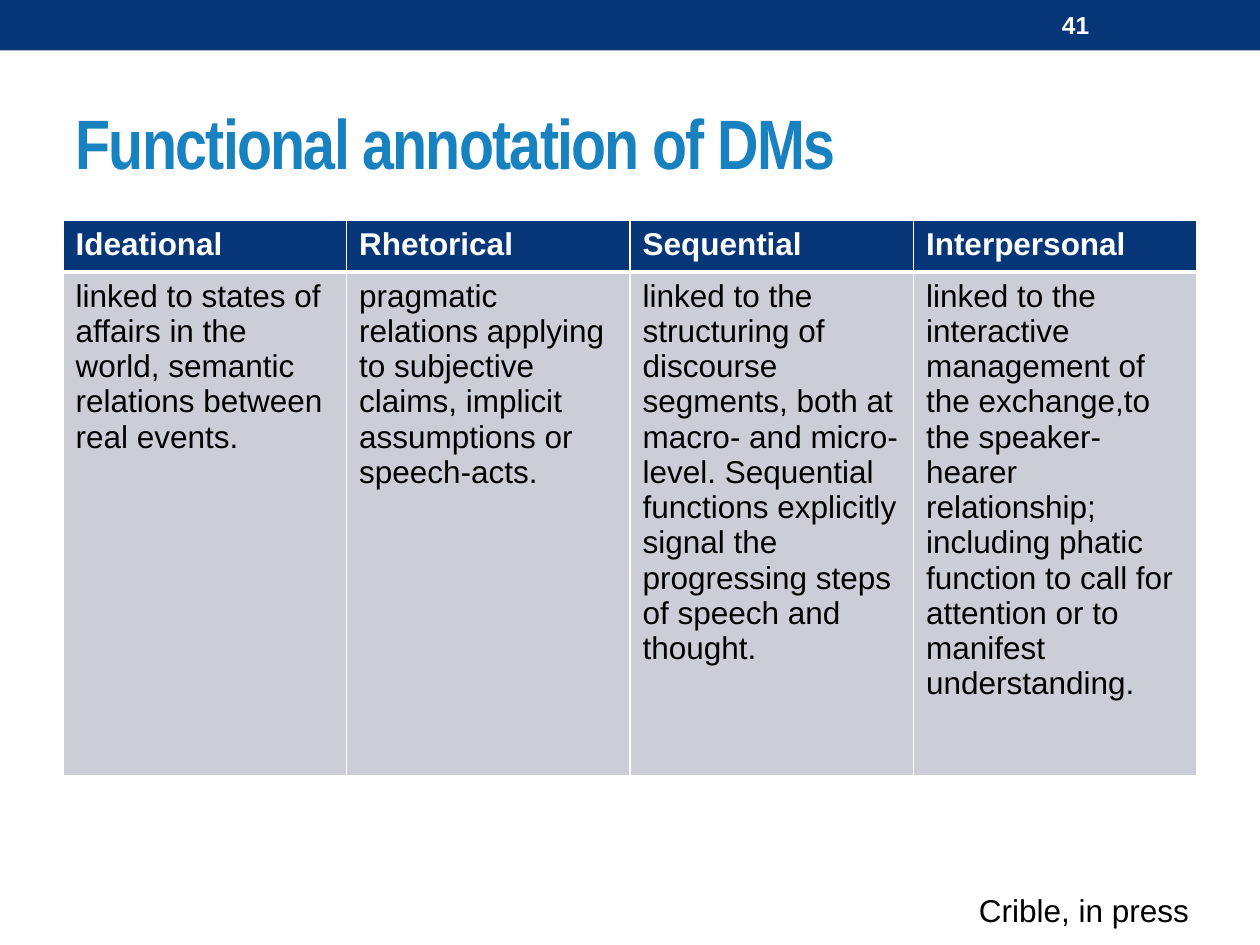
from pptx import Presentation
from pptx.dml.color import RGBColor
from pptx.enum.shapes import MSO_SHAPE as Shape
from pptx.enum.text import MSO_ANCHOR as Anchor, PP_ALIGN as Align
from pptx.oxml.ns import qn
from pptx.util import Inches, Pt
from lxml.etree import SubElement

NAVY, BLUE, GREY = "073779", "1782BF", "CCCED7"
WHITE, BLACK = "FFFFFF", "000000"

FUNCTIONS = {
    "Ideational": "linked to states of affairs in the world, semantic relations "
                  "between real events.",
    "Rhetorical": "pragmatic relations applying to subjective claims, implicit "
                  "assumptions or speech-acts.",
    "Sequential": "linked to the structuring of discourse segments, both at macro- "
                  "and micro-level. Sequential functions explicitly signal the "
                  "progressing steps of speech and thought.",
    "Interpersonal": "linked to the interactive management of the exchange,to the "
                     "speaker-hearer relationship; including phatic function to call "
                     "for attention or to manifest understanding.",
}


def set_fill(target, color):
    target.fill.solid()
    target.fill.fore_color.rgb = RGBColor.from_string(color)


def write(text_frame, text, size, color, bold=False, font_name="Arial"):
    text_frame.text = text
    paragraph = text_frame.paragraphs[0]
    paragraph.alignment = Align.LEFT
    font = paragraph.runs[0].font
    font.name, font.size, font.bold = font_name, Pt(size), bold
    font.color.rgb = RGBColor.from_string(color)


def place(shape, left, top, width, height):
    shape.left, shape.top = Inches(left), Inches(top)
    shape.width, shape.height = Inches(width), Inches(height)


def add_band(slide):
    band = slide.shapes.add_shape(Shape.RECTANGLE, 0, 0, Inches(10), Inches(0.4))
    band.shadow.inherit = False
    set_fill(band, NAVY)
    band.line.fill.background()


def set_title(slide, text):
    title = slide.shapes.title
    place(title, 0.5, 0.58, 9, 1.08)
    title.text_frame.vertical_anchor = Anchor.MIDDLE
    write(title.text_frame, text, 40, BLUE, True, "Arial Narrow")
    # Tighten the letter spacing by one point
    run = title.text_frame.paragraphs[0].runs[0]
    run.font._element.set("spc", "-100")


def add_text(slide, text, box, size, color, bold=False, anchor=Anchor.TOP):
    text_box = slide.shapes.add_textbox(*map(Inches, box))
    text_box.text_frame.word_wrap = True
    text_box.text_frame.vertical_anchor = anchor
    write(text_box.text_frame, text, size, color, bold)


def set_borders(cell, **widths):
    properties = cell._tc.get_or_add_tcPr()
    for side in "LRTB":
        line = SubElement(properties, qn(f"a:ln{side}"), w=str(Pt(widths.get(side, 1))))
        fill = SubElement(line, qn("a:solidFill"))
        SubElement(fill, qn("a:srgbClr"), val=WHITE)


def add_function_table(slide):
    frame = slide.shapes.add_table(2, len(FUNCTIONS), Inches(0.5), Inches(1.75),
                                   Inches(9), Inches(4.41))
    table = frame.table
    table.rows[0].height, table.rows[1].height = Inches(0.41), Inches(4)
    for column, (name, description) in enumerate(FUNCTIONS.items()):
        header, body = table.cell(0, column), table.cell(1, column)
        set_borders(header, B=3)
        set_borders(body, T=3)
        set_fill(header, NAVY)
        set_fill(body, GREY)
        write(header.text_frame, name, 18, WHITE, True)
        write(body.text_frame, description, 18, BLACK)


def main():
    presentation = Presentation()
    presentation.slide_width, presentation.slide_height = Inches(10), Inches(7.5)
    slide = presentation.slides.add_slide(presentation.slide_layouts[5])

    # Header band with the page number
    add_band(slide)
    add_text(slide, "41", (8.33, 0.02, 1.17, 0.36), 14, WHITE, True, Anchor.MIDDLE)

    # Title, table and citation
    set_title(slide, "Functional annotation of DMs")
    add_function_table(slide)
    add_text(slide, "Crible, in press", (7.67, 7.02, 1.95, 0.4), 18, BLACK)

    presentation.save("out.pptx")


if __name__ == "__main__":
    main()
